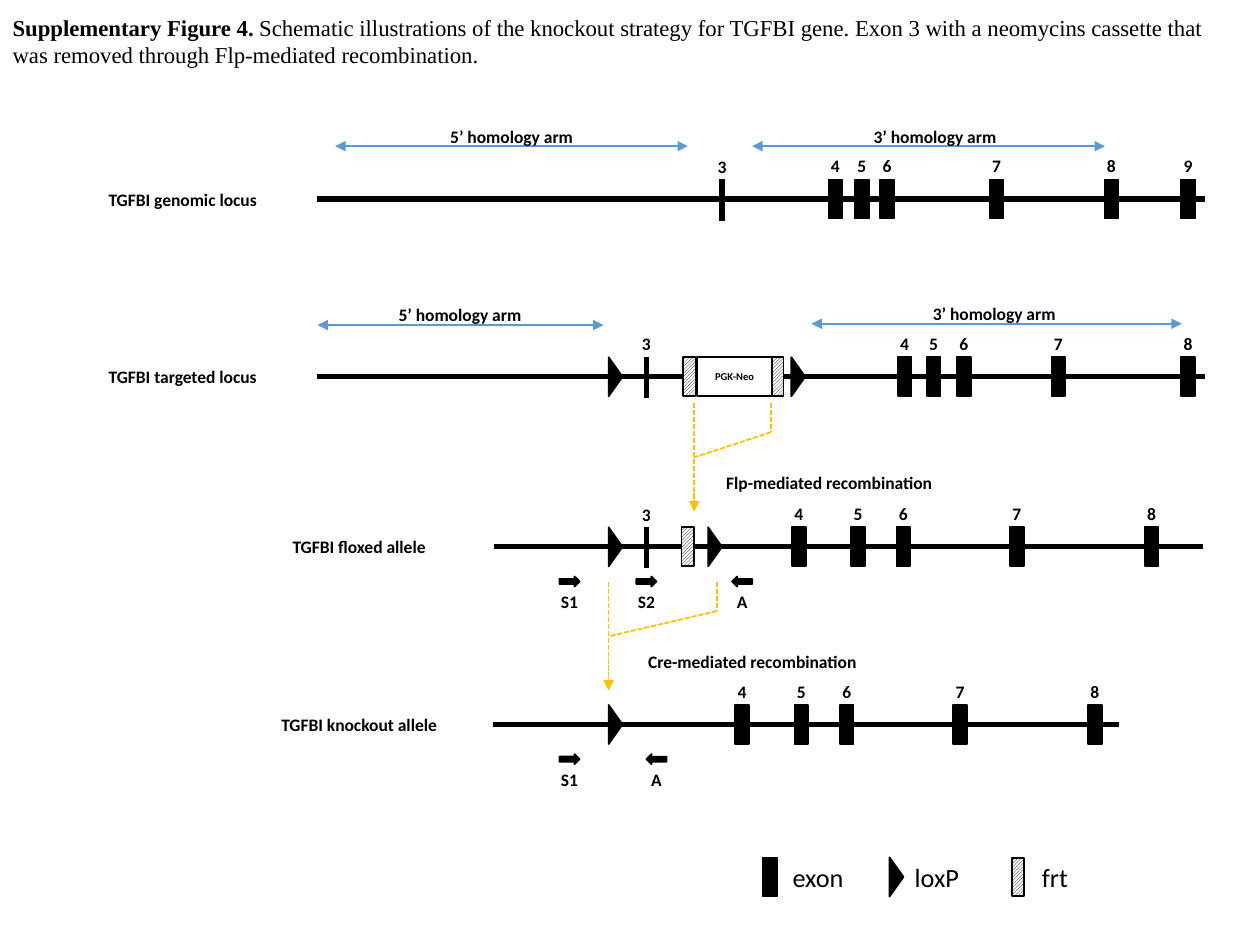
from pptx import Presentation
from pptx.dml.color import RGBColor
from pptx.enum.dml import MSO_LINE, MSO_PATTERN
from pptx.enum.shapes import MSO_CONNECTOR, MSO_SHAPE
from pptx.enum.text import MSO_ANCHOR, MSO_AUTO_SIZE, PP_ALIGN
from pptx.oxml.ns import qn
from pptx.util import Inches, Pt
from lxml.etree import SubElement

COLORS = {"ink": "000000", "paper": "FFFFFF", "arm": "5B9BD5", "recombination": "FFC000"}

presentation = Presentation()
presentation.slide_width = Inches(10)
presentation.slide_height = Inches(7.5)
column = presentation.slide_width / 100
row = presentation.slide_height / 75
slide = presentation.slides.add_slide(presentation.slide_layouts[5])


def add_item(kind, x, y, width, height, fill="ink", text="", size=10, bold=True,
             align=PP_ALIGN.CENTER, rotation=0):
    box = [int((x - width / 2) * column), int((y - height / 2) * row),
           int(width * column), int(height * row)]
    if kind is None:
        shape = slide.shapes.add_textbox(*box)
    else:
        shape = slide.shapes.add_shape(kind, *box)
        shape.shadow.inherit = False
        shape.rotation = rotation
        shape.line.color.rgb = RGBColor.from_string(COLORS["ink"])
        shape.line.width = Pt(1)
        if fill == "hatch":
            shape.fill.patterned()
            shape.fill.pattern = MSO_PATTERN.LIGHT_UPWARD_DIAGONAL
            shape.fill.fore_color.rgb = RGBColor.from_string(COLORS["ink"])
            shape.fill.back_color.rgb = RGBColor.from_string(COLORS["paper"])
        else:
            shape.fill.solid()
            shape.fill.fore_color.rgb = RGBColor.from_string(COLORS[fill])
    if text:
        frame = shape.text_frame
        frame.word_wrap = True
        frame.vertical_anchor = MSO_ANCHOR.MIDDLE
        frame.margin_left = frame.margin_right = frame.margin_top = frame.margin_bottom = 0
        paragraph = frame.paragraphs[0]
        paragraph.alignment = align
        run = paragraph.add_run()
        run.text = text
        run.font.name = "Calibri"
        run.font.size = Pt(size)
        run.font.bold = bold
        run.font.color.rgb = RGBColor.from_string(COLORS["ink"])


def add_line(start, end, color="ink", width=3, dashed=False, arrowheads=()):
    connector = slide.shapes.add_connector(
        MSO_CONNECTOR.STRAIGHT, int(start[0] * column), int(start[1] * row),
        int(end[0] * column), int(end[1] * row))
    connector.line.color.rgb = RGBColor.from_string(COLORS[color])
    connector.line.width = Pt(width)
    if dashed:
        connector.line.dash_style = MSO_LINE.SQUARE_DOT
    properties = connector._element.spPr
    for arrowhead in arrowheads:
        SubElement(properties.find(qn("a:ln")), qn(f"a:{arrowhead}"), type="triangle")
    SubElement(properties, qn("a:effectLst"))


title = slide.shapes.title
title.left, title.top = 0, int(0.6 * row)
title.width, title.height = int(99.2 * column), int(11.9 * row)
title.text_frame.word_wrap = True
title.text_frame.auto_size = MSO_AUTO_SIZE.NONE
title.text_frame.vertical_anchor = MSO_ANCHOR.TOP
paragraph = title.text_frame.paragraphs[0]
paragraph.alignment = PP_ALIGN.LEFT
for text, bold in [
    ("Supplementary Figure 4. ", True),
    ("Schematic illustrations of the knockout strategy for TGFBI gene. Exon 3 with a neomycins "
     "cassette that was removed through Flp-mediated recombination.", False),
]:
    run = paragraph.add_run()
    run.text = text
    run.font.name = "Times New Roman"
    run.font.size = Pt(13)
    run.font.bold = bold
    run.font.color.rgb = RGBColor.from_string(COLORS["ink"])

alleles = [
    {"name": "TGFBI genomic locus", "name_x": 14.5, "y": 15.8, "span": (25.2, 95.6), "exon_3": 57.3,
     "exons": {4: 66.3, 5: 68.4, 6: 70.4, 7: 79.1, 8: 88.2, 9: 94.3}, "loxP": [], "frt": [],
     "primers": []},
    {"name": "TGFBI targeted locus", "name_x": 14.5, "y": 29.9, "span": (25.2, 95.6), "exon_3": 51.3,
     "exons": {4: 71.8, 5: 74.1, 6: 76.5, 7: 84.0, 8: 94.3}, "loxP": [48.85, 63.35],
     "frt": [54.7, 61.7], "primers": []},
    {"name": "TGFBI floxed allele", "name_x": 28.5, "y": 43.4, "span": (39.2, 95.5), "exon_3": 51.3,
     "exons": {4: 63.4, 5: 68.1, 6: 71.7, 7: 80.7, 8: 91.4}, "loxP": [48.85, 56.75], "frt": [54.6],
     "primers": [("S1", 45.2, 0), ("S2", 51.3, 0), ("A", 58.9, 180)]},
    {"name": "TGFBI knockout allele", "name_x": 28.5, "y": 57.5, "span": (39.1, 88.8), "exon_3": None,
     "exons": {4: 58.9, 5: 63.6, 6: 67.2, 7: 76.2, 8: 86.9}, "loxP": [48.85], "frt": [],
     "primers": [("S1", 45.2, 0), ("A", 52.1, 180)]},
]
for allele in alleles:
    y = allele["y"]
    add_item(None, allele["name_x"], y, 21.4, 1.6, text=allele["name"])
    add_line((allele["span"][0], y), (allele["span"][1], y))
    for number, x in allele["exons"].items():
        add_item(MSO_SHAPE.RECTANGLE, x, y, 1.1, 3.1)
        add_item(None, x, y - 2.65, 4, 1.6, text=str(number))
    if allele["exon_3"]:
        add_line((allele["exon_3"], y - 1.6), (allele["exon_3"], y + 1.7))
        add_item(None, allele["exon_3"], y - 2.6, 4, 1.6, text="3")
    for x in allele["loxP"]:
        add_item(MSO_SHAPE.ISOSCELES_TRIANGLE, x, y, 3.1, 1.1, rotation=90)
    for x in allele["frt"]:
        add_item(MSO_SHAPE.RECTANGLE, x, y, 1, 3.1, fill="hatch")
    for primer, x, rotation in allele["primers"]:
        add_item(MSO_SHAPE.RIGHT_ARROW, x, y + 2.75, 1.6, 0.8, rotation=rotation)
        add_item(None, x, y + 4.35, 4, 1.6, text=primer)

add_item(MSO_SHAPE.RECTANGLE, 58.3, 29.9, 6, 3.1, fill="paper", text="PGK-Neo", size=6)

for name, left, right, y, label_x in [
    ("5’ homology arm", 26.6, 54.6, 11.6, 40.6),
    ("3’ homology arm", 59.7, 87.7, 11.6, 74.2),
    ("5’ homology arm", 25.2, 47.9, 25.8, 36.5),
    ("3’ homology arm", 64.4, 93.8, 25.7, 78.9),
]:
    add_line((left, y), (right, y), "arm", 1, arrowheads=("headEnd", "tailEnd"))
    add_item(None, label_x, y - 0.8, 21.4, 1.6, text=name)

for name, left, right, top, label_x in [
    ("Flp-mediated recombination", 55.1, 61.2, 32, 65.8),
    ("Cre-mediated recombination", 48.3, 56.9, 46.2, 59.7),
]:
    add_line((left, top), (left, top + 8.6), "recombination", 1, True, ("tailEnd",))
    add_line((right, top), (right, top + 2.3), "recombination", 1, True)
    add_line((right, top + 2.3), (left, top + 4.3), "recombination", 1, True)
    add_item(None, label_x, top + 6.3, 21.4, 1.6, text=name)

legend_y = 69.6
add_item(MSO_SHAPE.RECTANGLE, 61.1, legend_y, 1.1, 3.1)
add_item(MSO_SHAPE.ISOSCELES_TRIANGLE, 71.15, legend_y, 3.1, 1.1, rotation=90)
add_item(MSO_SHAPE.RECTANGLE, 80.8, legend_y, 1, 3, fill="hatch")
for name, left in [("exon", 62.9), ("loxP", 72.6), ("frt", 82.7)]:
    add_item(None, left + 3, legend_y, 6, 3, text=name, size=15, bold=False, align=PP_ALIGN.LEFT)

presentation.save("out.pptx")
